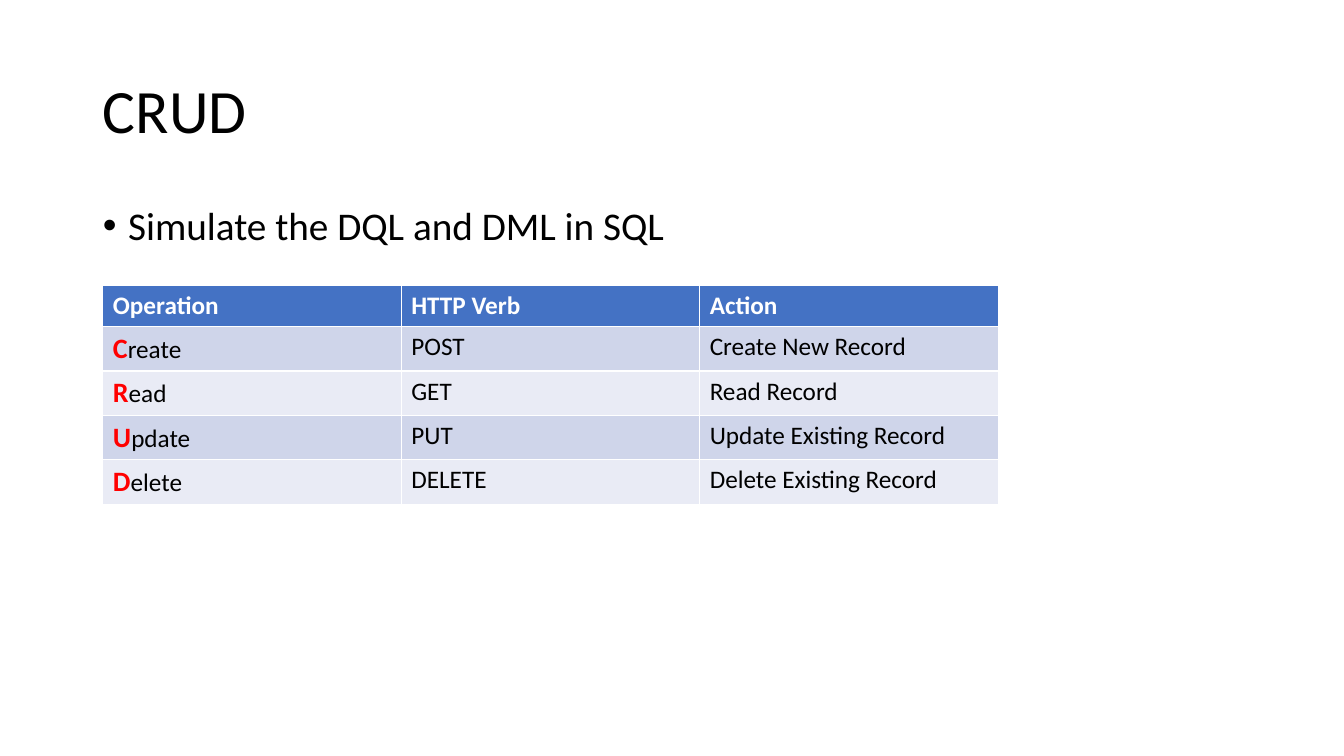
import pptx
import pptx.util
import pptx.dml.color
import pptx.enum.text
from pptx.util import Inches, Pt

TITLE = "CRUD"
BULLET = "Simulate the DQL and DML in SQL"
HEADER = ("Operation", "HTTP Verb", "Action")
OPERATIONS = [
    ("Create", "POST", "Create New Record"),
    ("Read", "GET", "Read Record"),
    ("Update", "PUT", "Update Existing Record"),
    ("Delete", "DELETE", "Delete Existing Record"),
]
FONT = "Calibri"
HEADER_FILL = "4472C4"
BAND_FILLS = ("CFD5EA", "E9EBF5")
COL_W, ROW_H = 2.96, 0.41


def set_color(target, value):
    target.rgb = pptx.dml.color.RGBColor.from_string(value)


def set_font(font, size, color, bold=False):
    font.name = FONT
    font.size = Pt(size)
    font.bold = bold
    set_color(font.color, color)


def fill_placeholder(sp, box, text, size):
    sp.left, sp.top, sp.width, sp.height = map(Inches, box)
    tf = sp.text_frame
    tf.text = text
    tf.auto_size = pptx.enum.text.MSO_AUTO_SIZE.NONE
    p = tf.paragraphs[0]
    p.alignment = pptx.enum.text.PP_ALIGN.LEFT
    p.line_spacing = 0.9
    set_font(p.font, size, "000000")
    return p


def fill_cell(cell, text, fill, color, bold=False):
    cell.fill.solid()
    set_color(cell.fill.fore_color, fill)
    cell.text = text
    p = cell.text_frame.paragraphs[0]
    set_font(p.font, 18, color, bold)
    return p


def main():
    prs = pptx.Presentation()
    prs.slide_width, prs.slide_height = Inches(13.33), Inches(7.5)
    s = prs.slides.add_slide(prs.slide_layouts[1])

    fill_placeholder(s.shapes.title, (0.92, 0.4, 11.5, 1.45), TITLE, 44)
    p = fill_placeholder(s.placeholders[1], (0.92, 2, 11.5, 4.76), BULLET, 28)
    p.space_before = Pt(10)
    pPr = p._p.get_or_add_pPr()
    pPr.set("marL", str(Inches(0.25)))
    pPr.set("indent", str(Inches(-0.25)))

    n_rows, n_cols = len(OPERATIONS) + 1, len(HEADER)
    table = s.shapes.add_table(
        n_rows, n_cols, Inches(1.02), Inches(2.83),
        Inches(COL_W * n_cols), Inches(ROW_H * n_rows)).table

    for c, text in enumerate(HEADER):
        fill_cell(table.cell(0, c), text, HEADER_FILL, "FFFFFF", True)
    for i, operation in enumerate(OPERATIONS):
        for c, text in enumerate(operation):
            p = fill_cell(table.cell(i + 1, c), text, BAND_FILLS[i % 2], "000000")
            if c == 0:
                p.runs[0].text = text[0]
                set_font(p.runs[0].font, 20, "FF0000", True)
                r = p.add_run()
                r.text = text[1:]
                set_font(r.font, 18, "000000")

    prs.save("out.pptx")


if __name__ == "__main__":
    main()
